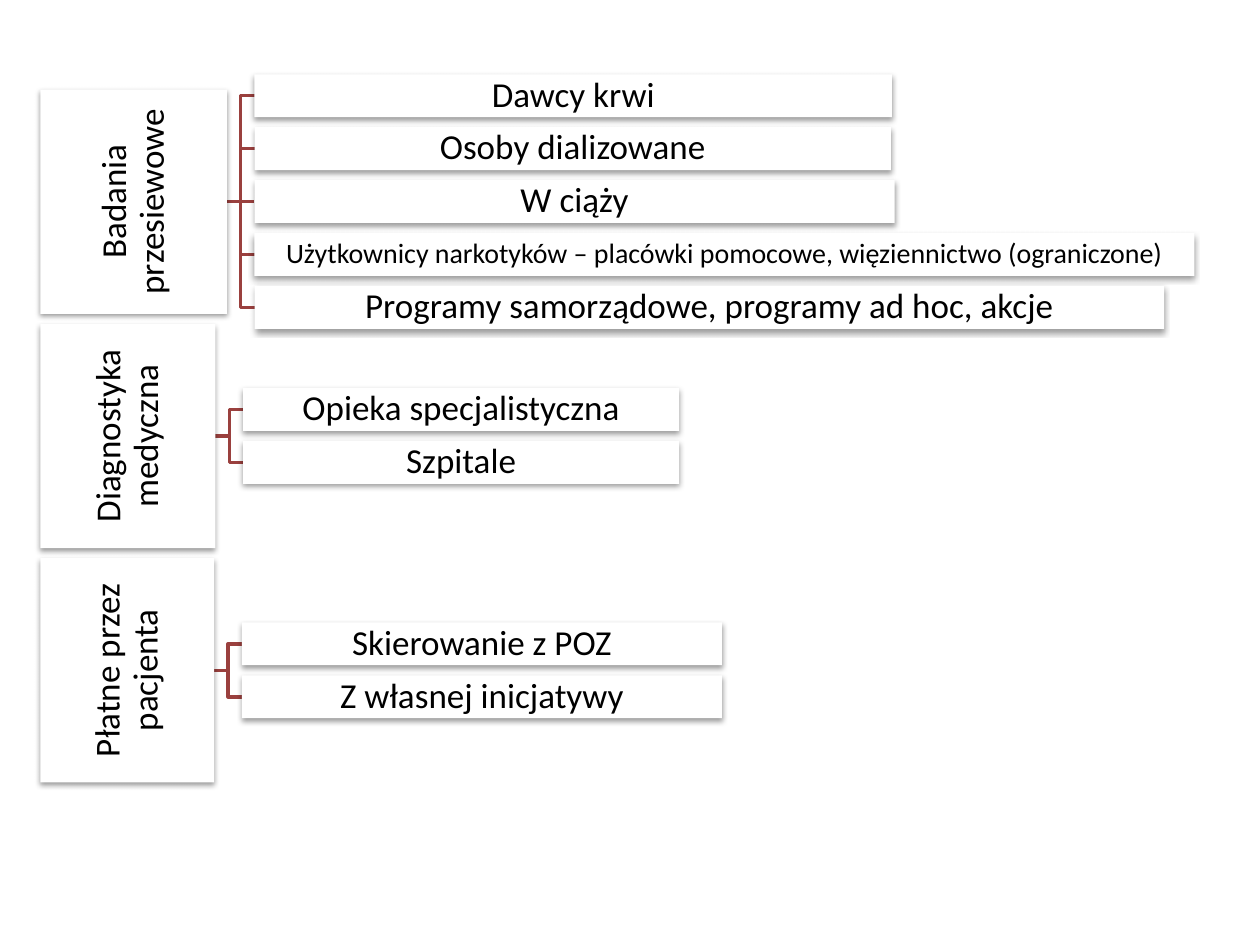
import pptx
import pptx.dml.color
import pptx.enum.shapes
import pptx.enum.text
import pptx.oxml
import pptx.oxml.ns
import pptx.oxml.xmlchemy
import pptx.util
from dataclasses import dataclass

Inches = pptx.util.Inches


@dataclass(frozen=True)
class Theme:
    font: str = "Calibri"
    text: str = "000000"
    box: str = "FFFFFF"
    line: str = "9A403E"
    size: int = 20
    small: int = 16
    line_width: int = 2


SLIDE_W, SLIDE_H = 10, 7.5
ROOT_LEFT, ROOT_LENGTH = 0.32, 1.78
FIRST_CENTER, GROUP_PITCH = 1.6, 1.86
GAP, ROW_H, ROW_PITCH = 0.22, 0.34, 0.42

THEME = Theme()
GROUPS = [
    ("Badania przesiewowe", 1.48, [
        ("Dawcy krwi", 5.06, THEME.size),
        ("Osoby dializowane", 5.05, THEME.size),
        ("W ciąży", 5.08, THEME.size),
        ("Użytkownicy narkotyków – placówki pomocowe, więziennictwo (ograniczone)", 7.46, THEME.small),
        ("Programy samorządowe, programy ad hoc, akcje", 7.22, THEME.size),
    ]),
    ("Diagnostyka medyczna", 1.39, [
        ("Opieka specjalistyczna", 3.46, THEME.size),
        ("Szpitale", 3.46, THEME.size),
    ]),
    ("Płatne przez pacjenta", 1.38, [
        ("Skierowanie z POZ", 3.81, THEME.size),
        ("Z własnej inicjatywy", 3.81, THEME.size),
    ]),
]

SHADOW = (
    f'<a:effectLst {pptx.oxml.ns.nsdecls("a")}>'
    '<a:outerShdw blurRad="40000" dist="20000" dir="5400000" rotWithShape="0">'
    '<a:srgbClr val="000000"><a:alpha val="38000"/></a:srgbClr>'
    '</a:outerShdw></a:effectLst>'
)


def rgb(value):
    return pptx.dml.color.RGBColor.from_string(value)


def apply(target, values):
    for name, value in values.items():
        setattr(target, name, value)


class Diagram:
    """Draws boxes and branches on one slide in a shared theme."""

    def __init__(self, slide, theme):
        self.shapes = slide.shapes
        self.theme = theme

    def box(self, text, cx, cy, width, height, size, rotation=0):
        sp = self.shapes.add_shape(
            pptx.enum.shapes.MSO_SHAPE.RECTANGLE,
            Inches(cx - width / 2), Inches(cy - height / 2), Inches(width), Inches(height))
        sp.rotation = rotation
        sp.fill.solid()
        sp.fill.fore_color.rgb = rgb(self.theme.box)
        sp.line.fill.background()
        sp._element.spPr.append(pptx.oxml.parse_xml(SHADOW))
        tf = sp.text_frame
        margins = {f"margin_{side}": Inches(0.01) for side in ("left", "top", "right", "bottom")}
        apply(tf, {"word_wrap": True, "vertical_anchor": pptx.enum.text.MSO_ANCHOR.MIDDLE, **margins})
        p = tf.paragraphs[0]
        apply(p, {"alignment": pptx.enum.text.PP_ALIGN.CENTER, "line_spacing": 0.9})
        r = p.add_run()
        r.text = text
        apply(r.font, {"name": self.theme.font, "size": pptx.util.Pt(size)})
        r.font.color.rgb = rgb(self.theme.text)

    def branch(self, x, y, end_y):
        start, middle, end = (Inches(x + step) for step in (0, GAP / 2, GAP))
        top, bottom = Inches(y), Inches(end_y)
        if top == bottom:
            sp = self.shapes.add_connector(
                pptx.enum.shapes.MSO_CONNECTOR.STRAIGHT, start, top, end, bottom)
            sp._element.spPr.append(pptx.oxml.xmlchemy.OxmlElement("a:effectLst"))
        else:
            builder = self.shapes.build_freeform(start, top)
            builder.add_line_segments([(middle, top), (middle, bottom), (end, bottom)], close=False)
            sp = builder.convert_to_shape()
            sp.fill.background()
            sp.shadow.inherit = False
        sp.line.color.rgb = rgb(self.theme.line)
        sp.line.width = pptx.util.Pt(self.theme.line_width)

    def group(self, label, thickness, rows, center):
        right = ROOT_LEFT + thickness
        centers = [center + (i - (len(rows) - 1) / 2) * ROW_PITCH for i in range(len(rows))]
        for y in centers:
            self.branch(right, center, y)
        self.box(label, ROOT_LEFT + thickness / 2, center, ROOT_LENGTH, thickness, self.theme.size, 270)
        for (text, width, size), y in zip(rows, centers):
            self.box(text, right + GAP + width / 2, y, width, ROW_H, size)


def main():
    prs = pptx.Presentation()
    apply(prs, {"slide_width": Inches(SLIDE_W), "slide_height": Inches(SLIDE_H)})
    s = prs.slides.add_slide(prs.slide_layouts[6])
    diagram = Diagram(s, THEME)
    for i, (label, thickness, rows) in enumerate(GROUPS):
        diagram.group(label, thickness, rows, FIRST_CENTER + i * GROUP_PITCH)
    prs.save("out.pptx")


if __name__ == "__main__":
    main()
